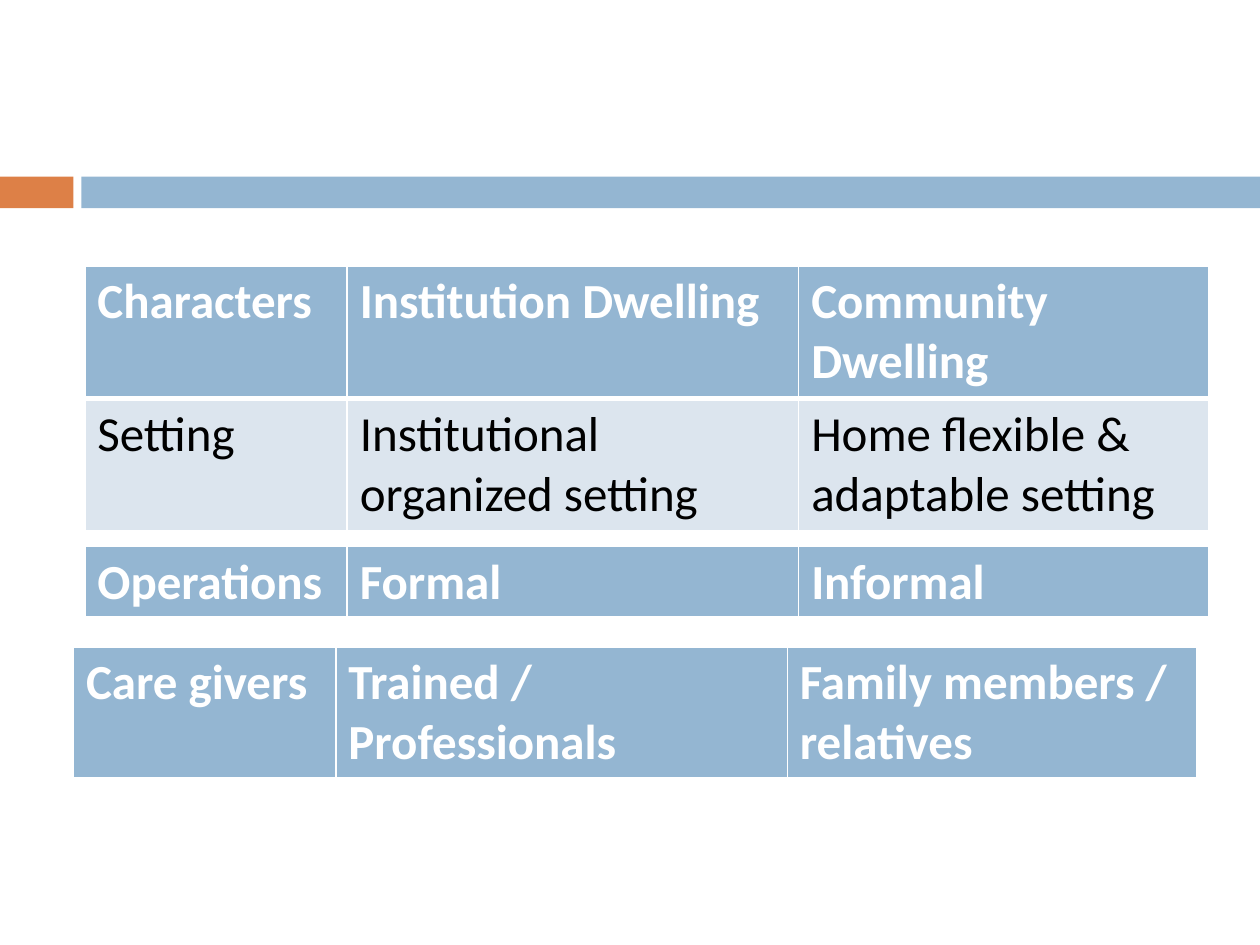
from dataclasses import dataclass

from lxml.etree import SubElement
from pptx import Presentation
from pptx.dml.color import RGBColor
from pptx.enum.shapes import MSO_SHAPE
from pptx.oxml.ns import qn
from pptx.util import Cm, Pt

BLUE, PALE, ORANGE = "94B6D2", "DCE5EE", "DD8047"
WHITE, BLACK = "FFFFFF", "000000"
COLS = (5.29, 9.1, 8.26)
TALL, SHORT = 2.62, 1.45


@dataclass
class Bar:
    left: float
    width: float
    fill: str


@dataclass
class Row:
    texts: tuple[str, ...]
    height: float = TALL
    head: bool = True


@dataclass
class Grid:
    left: float
    top: float
    rows: list[Row]


BARS = [Bar(0, 1.48, ORANGE), Bar(1.64, 23.76, BLUE)]
GRIDS = [
    Grid(1.71, 5.36, [
        Row(("Characters", "Institution Dwelling", "Community Dwelling")),
        Row(("Setting", "Institutional organized setting",
             "Home flexible & adaptable setting"), head=False),
    ]),
    Grid(1.71, 11.01, [Row(("Operations", "Formal", "Informal"), SHORT)]),
    Grid(1.48, 13.04, [
        Row(("Care givers", "Trained / Professionals",
             "Family members / relatives")),
    ]),
]


def paint(item, color: str) -> None:
    item.solid()
    item.fore_color.rgb = RGBColor.from_string(color)


def write(frame, text: str, *, size: float = 28, color: str = BLACK,
          bold: bool = False, font: str = "Calibri") -> None:
    run = frame.paragraphs[0].add_run()
    run.text = text
    run.font.size = Pt(size)
    run.font.name = font
    run.font.bold = bold
    paint(run.font.fill, color)


def edge(cell, base: float) -> None:
    props = cell._tc.get_or_add_tcPr()
    widths = {"a:lnL": 1, "a:lnR": 1, "a:lnT": 1, "a:lnB": base}
    for tag, width in widths.items():
        line = SubElement(props, qn(tag), w=str(Pt(width)))
        fill = SubElement(line, qn("a:solidFill"))
        SubElement(fill, qn("a:srgbClr"), val=WHITE)


def draw_bar(slide, bar: Bar) -> None:
    shape = slide.shapes.add_shape(
        MSO_SHAPE.RECTANGLE, Cm(bar.left), Cm(3.56), Cm(bar.width), Cm(0.64))
    shape.shadow.inherit = False
    paint(shape.fill, bar.fill)
    shape.line.fill.background()


def draw_grid(slide, grid: Grid) -> None:
    high = sum(row.height for row in grid.rows)
    table = slide.shapes.add_table(
        len(grid.rows), len(COLS), Cm(grid.left), Cm(grid.top),
        Cm(sum(COLS)), Cm(high)).table
    for col, width in zip(table.columns, COLS):
        col.width = Cm(width)
    for line, row in zip(table.rows, grid.rows):
        line.height = Cm(row.height)
        for cell, text in zip(line.cells, row.texts):
            edge(cell, 3 if row.head else 1)
            paint(cell.fill, BLUE if row.head else PALE)
            write(cell.text_frame, text, bold=row.head,
                  color=WHITE if row.head else BLACK)


def main() -> None:
    deck = Presentation()
    deck.slide_width, deck.slide_height = Cm(25.4), Cm(19.05)
    slide = deck.slides.add_slide(deck.slide_layouts[6])
    for bar in BARS:
        draw_bar(slide, bar)
    for grid in GRIDS:
        draw_grid(slide, grid)
    deck.save("out.pptx")


if __name__ == "__main__":
    main()
